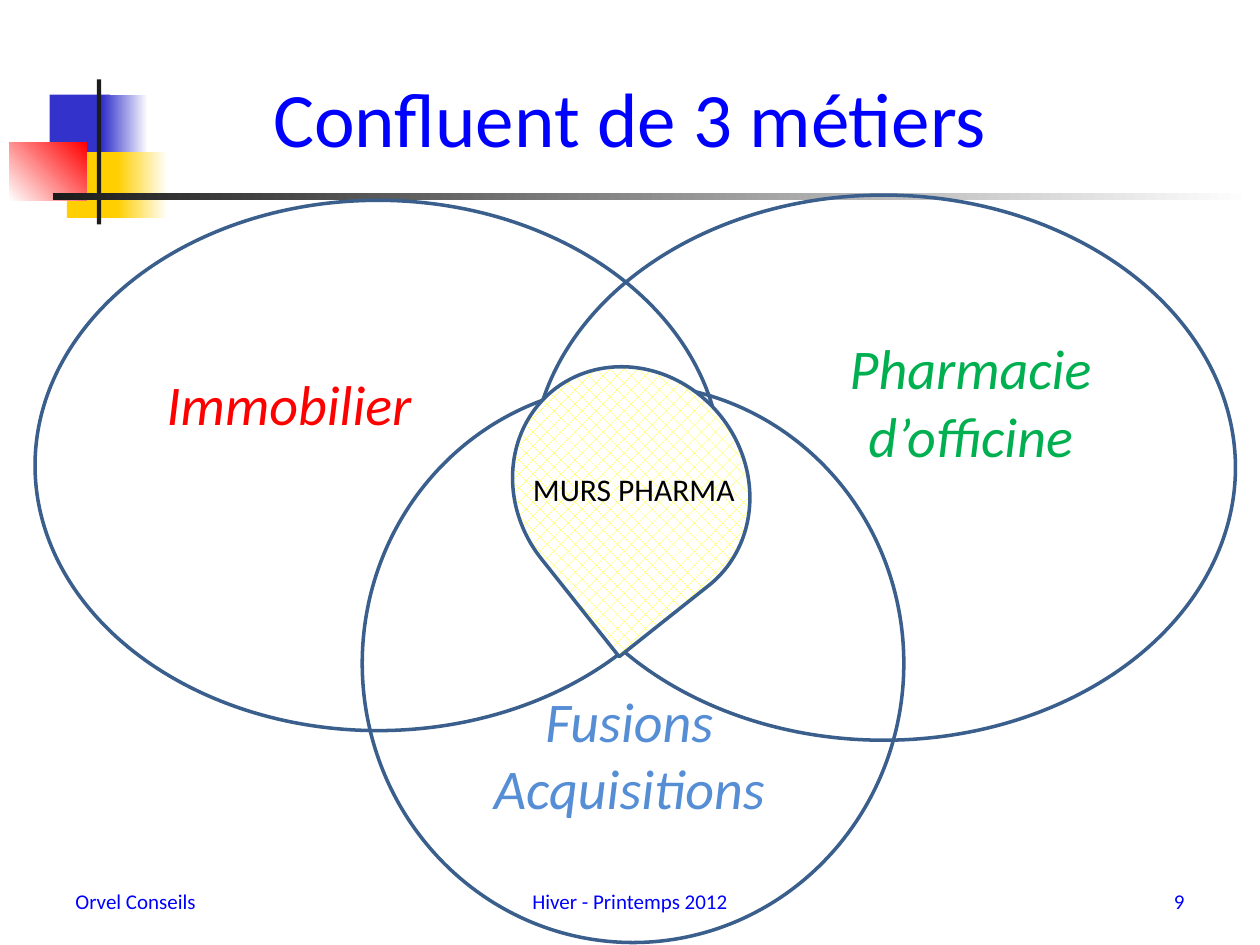
from pptx import Presentation
from pptx.dml.color import RGBColor
from pptx.enum.dml import MSO_PATTERN
from pptx.enum.shapes import MSO_SHAPE
from pptx.enum.text import MSO_ANCHOR, PP_ALIGN
from pptx.util import Pt

COLORS = {
    "blue": "3333CC", "gold": "FFCF01", "red": "FF0000", "dark": "1C1C1C",
    "white": "FFFFFF", "black": "000000", "yellow": "FFFF00", "title": "0000FF",
    "outline": "3A5F8C", "sky": "558ED5", "green": "00B050",
}
RGB = {name: RGBColor.from_string(value) for name, value in COLORS.items()}

deck = Presentation()
deck.slide_width, deck.slide_height = Pt(720), Pt(540)
page = deck.slides.add_slide(deck.slide_layouts[5])


def add_preset(preset, bounds):
    shape = page.shapes.add_shape(preset, *map(Pt, bounds))
    shape.shadow.inherit = False
    return shape


def write(box, text, size, color, align, italic=False, anchor=MSO_ANCHOR.TOP):
    """Fill a text box or placeholder with one formatted paragraph."""
    frame = box.text_frame
    frame.word_wrap = True
    frame.vertical_anchor = anchor
    para = frame.paragraphs[0]
    para.text = text
    para.alignment = align
    para.font.name = "Calibri"
    para.font.size = Pt(size)
    para.font.italic = italic
    para.font.color.rgb = RGB[color]


# Corner ornament: one color is solid, two colors are a gradient
ornament = [
    ((28.3, 54, 34.5, 37.5), ["blue"], 0),
    ((58.5, 54, 26, 37.5), ["blue", "white"], 0),
    ((38.3, 87, 33, 37.5), ["gold"], 0),
    ((67, 87, 28.8, 37.5), ["gold", "white"], 0),
    ((5.3, 81.4, 44.2, 33.2), ["white", "red"], 45),
    ((55.4, 45.4, 2.4, 82.8), ["dark"], 0),
    ((30.2, 110.2, 684.7, 4.3), ["dark", "white"], 0),
]
for bounds, colors, angle in ornament:
    block = add_preset(MSO_SHAPE.RECTANGLE, bounds)
    block.line.fill.background()
    if len(colors) == 1:
        block.fill.solid()
        block.fill.fore_color.rgb = RGB[colors[0]]
    else:
        block.fill.gradient()
        block.fill.gradient_angle = angle
        for stop, color in zip(block.fill.gradient_stops, colors):
            stop.color.rgb = RGB[color]

title = page.shapes.title
title.left, title.top, title.width, title.height = map(Pt, (36, 21.6, 648, 90))
write(title, "Confluent de 3 métiers", 44, "title", PP_ALIGN.CENTER,
      anchor=MSO_ANCHOR.MIDDLE)

footers = [
    ("Orvel Conseils", 36, 168, PP_ALIGN.LEFT),
    ("Hiver - Printemps 2012", 246, 228, PP_ALIGN.CENTER),
    ("9", 516, 168, PP_ALIGN.RIGHT),
]
for text, left, width, align in footers:
    box = page.shapes.add_textbox(Pt(left), Pt(500.5), Pt(width), Pt(28.75))
    write(box, text, 12, "title", align, anchor=MSO_ANCHOR.MIDDLE)

# Three overlapping trades
trades = [
    ("Immobilier", "red", (20, 114.5, 392, 303), (35.3, 207.4, 260, 46)),
    ("Fusions Acquisitions", "sky", (207, 219.6, 309.5, 319), (229.7, 388.8, 260, 85)),
    ("Pharmacie d’officine", "green", (304, 111.5, 402, 311.5), (433.4, 187.2, 242.6, 85)),
]
for text, color, circle_bounds, label_bounds in trades:
    circle = add_preset(MSO_SHAPE.OVAL, circle_bounds)
    circle.fill.background()
    circle.line.color.rgb = RGB["outline"]
    circle.line.width = Pt(2)
    label = page.shapes.add_textbox(*map(Pt, label_bounds))
    write(label, text, 32, color, PP_ALIGN.CENTER, italic=True)

# Common ground in the middle
drop = add_preset(MSO_SHAPE.TEAR, (295.2, 207.4, 131, 142.6))
drop.rotation = 141.5
drop.fill.patterned()
drop.fill.pattern = MSO_PATTERN.PERCENT_25
drop.fill.fore_color.rgb = RGB["yellow"]
drop.fill.back_color.rgb = RGB["white"]
drop.line.color.rgb = RGB["outline"]
drop.line.width = Pt(2)
core = page.shapes.add_textbox(Pt(297.4), Pt(265), Pt(147.6), Pt(31.7))
write(core, "MURS PHARMA", 18, "black", PP_ALIGN.LEFT)

deck.save("out.pptx")
